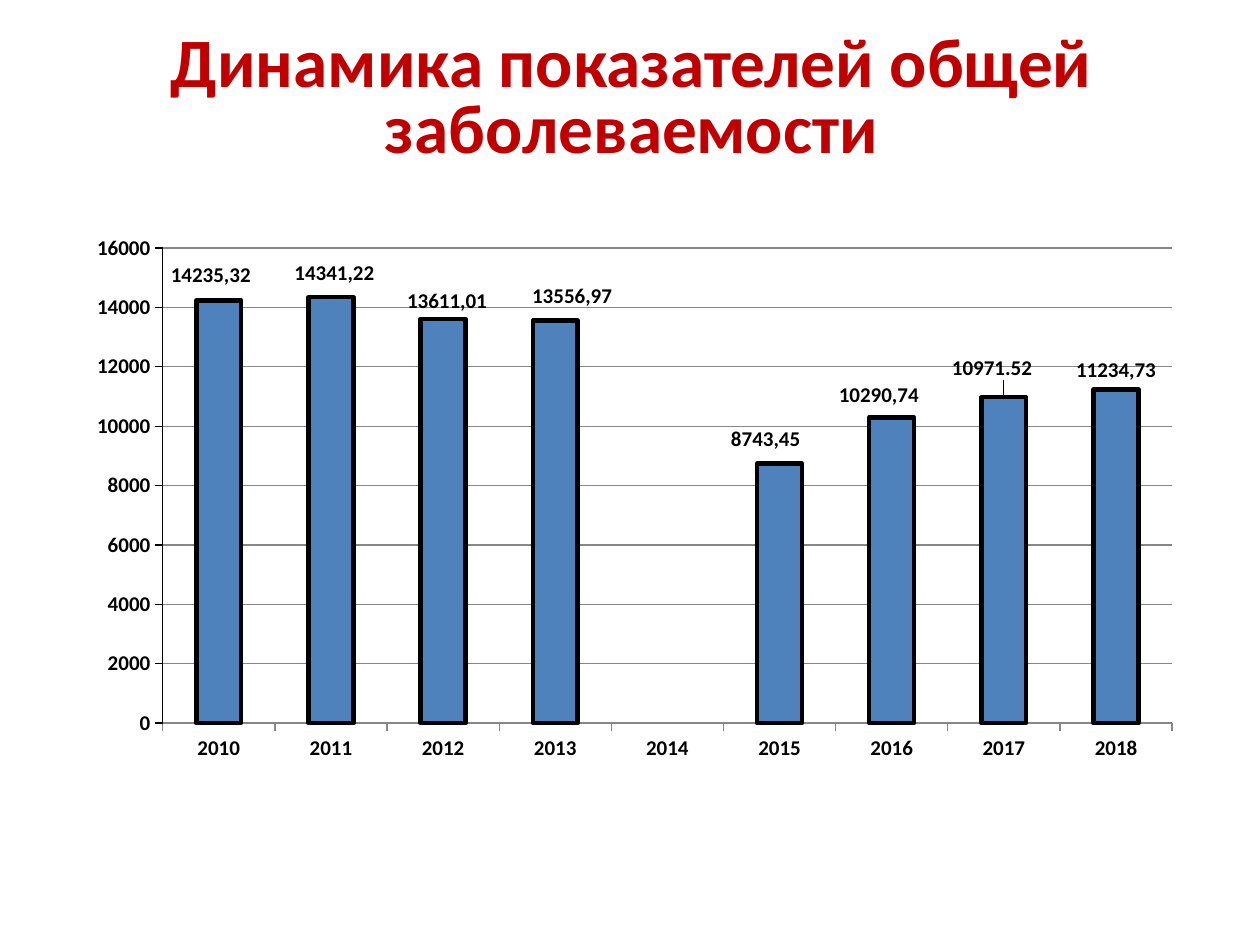
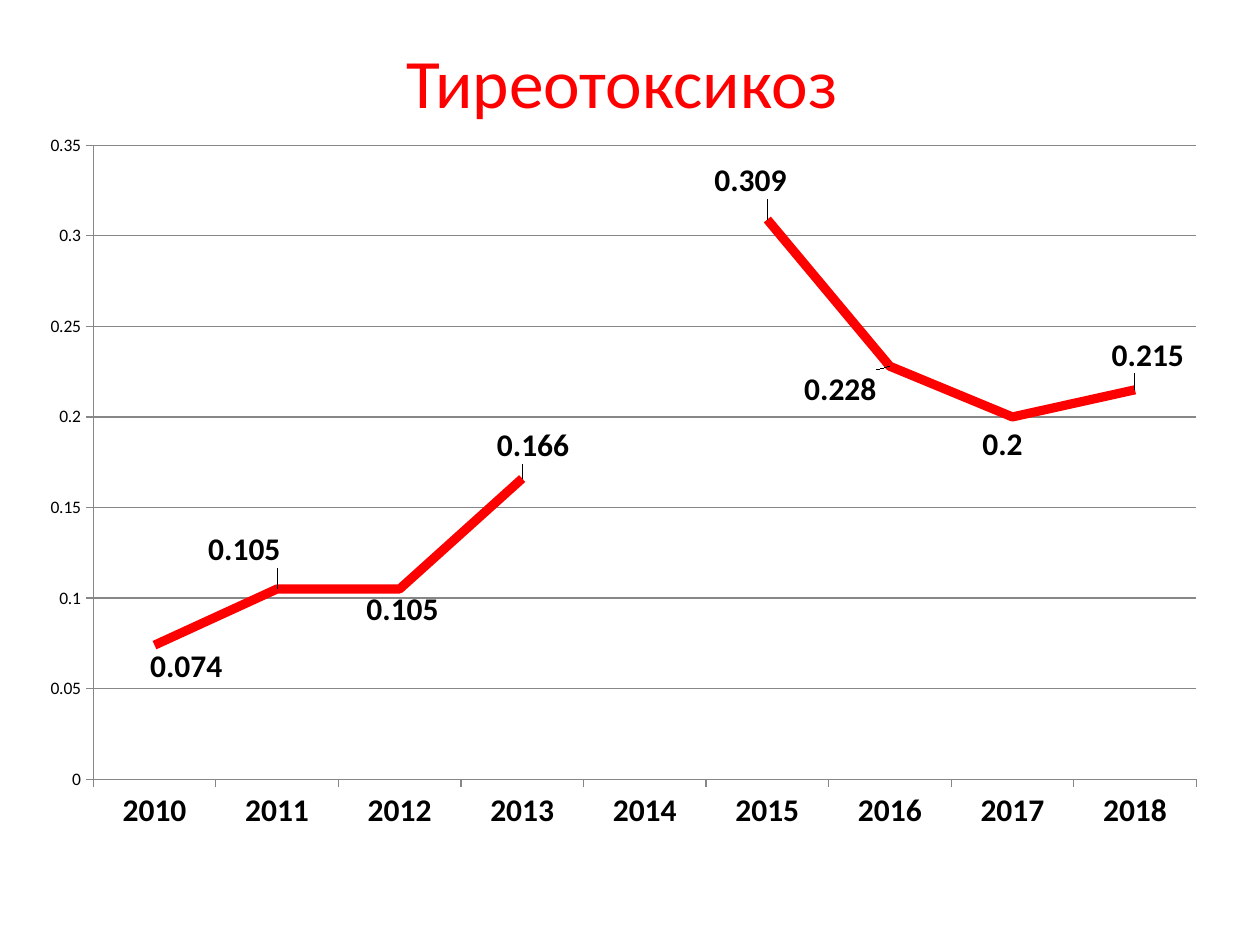
"""Build two chart slides on yearly morbidity figures."""
from dataclasses import dataclass
from typing import NamedTuple, Optional

from lxml import etree
from pptx import Presentation
from pptx import util as u
from pptx.chart import data as cd
from pptx.dml import color
from pptx.enum import chart as ec
from pptx.enum import text
from pptx.oxml import ns


@dataclass(frozen=True)
class Theme:
    font: str = "Calibri"
    black: str = "000000"
    grey: str = "878787"
    blue: str = "4F81BD"
    red: str = "FF0000"
    dark_red: str = "C00000"
    title_size: float = 39.6
    base_size: float = 10
    bar_text: float = 12
    line_text: float = 18
    hairline: float = 0.75
    bar_outline: float = 2.5
    trend_width: float = 5.25


class Box(NamedTuple):
    left: float
    top: float
    width: float
    height: float

    def cm(self) -> list:
        return [u.Cm(v) for v in self]


class Point(NamedTuple):
    value: Optional[float] = None
    dx: float = 0
    dy: float = 0
    label: str = ""


@dataclass(frozen=True)
class ChartSpec:
    kind: ec.XL_CHART_TYPE
    box: Box
    plot: Box
    points: list[Point]
    label_pos: ec.XL_LABEL_POSITION
    label_size: float
    value_size: float
    value_bold: bool
    value_line: str
    top: float
    step: float
    number_format: str


THEME = Theme()
YEARS = [str(year) for year in range(2010, 2019)]

MORBIDITY = ChartSpec(
    kind=ec.XL_CHART_TYPE.COLUMN_CLUSTERED,
    box=Box(1.27, 4.45, 22.86, 12.57),
    plot=Box(2.01, 0.55, 20.35, 9.58),
    points=[
        Point(14235.32, -0.16, -0.16, "14235,32"),
        Point(14341.22, 0.07, -0.14, "14341,22"),
        Point(13611.01, 0.08, 0, "13611,01"),
        Point(13556.97, 0.34, -0.14, "13556,97"),
        Point(),
        Point(8743.45, -0.28, -0.14, "8743,45"),
        Point(10290.74, -0.26, -0.1, "10290,74"),
        Point(10971.52, -0.24, -0.24),
        Point(11234.73, 0, -0.04, "11234,73"),
    ],
    label_pos=ec.XL_LABEL_POSITION.OUTSIDE_END,
    label_size=THEME.bar_text, value_size=THEME.bar_text, value_bold=True,
    value_line=THEME.black, top=16000, step=2000, number_format="General",
)

THYROTOXICOSIS = ChartSpec(
    kind=ec.XL_CHART_TYPE.LINE,
    box=Box(0.71, 2.51, 23.42, 14.6),
    plot=Box(1.17, 0.42, 22.25, 12.78),
    points=[
        Point(0.074, 0.64, 0.92),
        Point(0.105, -0.66, -0.32),
        Point(0.105, 0.06, 0.9),
        Point(0.166, 0.22, -0.18),
        Point(),
        Point(0.309, -0.34, -0.3),
        Point(0.228, -1, 0.94),
        Point(0.2, -0.2, 1.04),
        Point(0.215, 0.26, -0.22),
    ],
    label_pos=ec.XL_LABEL_POSITION.ABOVE,
    label_size=THEME.line_text, value_size=THEME.base_size, value_bold=False,
    value_line=THEME.grey, top=0.35, step=0.05, number_format="General",
)


def rgb(value: str) -> color.RGBColor:
    return color.RGBColor.from_string(value)


def set_font(font, size: float, bold: bool, ink: str = THEME.black) -> None:
    font.name, font.size, font.bold = THEME.font, u.Pt(size), bold
    font.color.rgb = rgb(ink)


def set_line(line, ink: str, width: float = THEME.hairline) -> None:
    line.color.rgb = rgb(ink)
    line.width = u.Pt(width)


def manual_layout(**settings) -> etree.ElementBase:
    layout = etree.Element(ns.qn("c:layout"))
    manual = etree.SubElement(layout, ns.qn("c:manualLayout"))
    for tag, value in settings.items():
        etree.SubElement(manual, ns.qn(f"c:{tag}")).set("val", str(value))
    return layout


def set_title(s, caption: str, box: Box, ink: str, bold: bool, spacing: float) -> None:
    sp = s.shapes.title
    sp.left, sp.top, sp.width, sp.height = box.cm()
    tf = sp.text_frame
    tf.text = caption
    tf.word_wrap = True
    tf.auto_size = text.MSO_AUTO_SIZE.NONE
    tf.vertical_anchor = text.MSO_ANCHOR.MIDDLE
    p = tf.paragraphs[0]
    p.alignment = text.PP_ALIGN.CENTER
    p.line_spacing = spacing
    set_font(p.runs[0].font, THEME.title_size, bold, ink)


def place_plot(chart, spec: ChartSpec) -> None:
    area = chart.element.xpath("//c:plotArea")[0]
    for old in area.findall(ns.qn("c:layout")):
        area.remove(old)
    area.insert(0, manual_layout(
        layoutTarget="inner", xMode="edge", yMode="edge",
        x=spec.plot.left / spec.box.width, y=spec.plot.top / spec.box.height,
        w=spec.plot.width / spec.box.width, h=spec.plot.height / spec.box.height))


def format_axes(chart, spec: ChartSpec) -> None:
    cat, val = chart.category_axis, chart.value_axis
    for axis, ink, size, bold in (
            (cat, THEME.grey, spec.label_size, True),
            (val, spec.value_line, spec.value_size, spec.value_bold)):
        axis.major_tick_mark = ec.XL_TICK_MARK.OUTSIDE
        axis.minor_tick_mark = ec.XL_TICK_MARK.NONE
        set_line(axis.format.line, ink)
        set_font(axis.tick_labels.font, size, bold)
    cat.has_major_gridlines = False
    val.has_major_gridlines = True
    set_line(val.major_gridlines.format.line, THEME.grey)
    val.minimum_scale, val.maximum_scale, val.major_unit = 0, spec.top, spec.step


def label_points(chart, spec: ChartSpec) -> None:
    plot = chart.plots[0]
    labelled = [(i, pt) for i, pt in enumerate(spec.points) if pt.value is not None]
    for i, pt in labelled:
        label = plot.series[0].points[i].data_label
        if pt.label:
            tf = label.text_frame
            tf.text = pt.label
            set_font(tf.paragraphs[0].runs[0].font, spec.label_size, True)
        else:
            set_font(label.font, spec.label_size, True)
        label.position = spec.label_pos
    for node, (_, pt) in zip(chart.element.xpath("//c:ser/c:dLbls/c:dLbl"), labelled):
        node.insert(1, manual_layout(x=pt.dx / spec.box.width, y=pt.dy / spec.box.height))


def add_chart(s, spec: ChartSpec):
    data = cd.CategoryChartData(number_format=spec.number_format)
    data.categories = YEARS
    data.add_series("Series 1", [pt.value for pt in spec.points])
    chart = s.shapes.add_chart(spec.kind, *spec.box.cm(), data).chart
    chart.has_legend = chart.has_title = False
    set_font(chart.font, THEME.base_size, False)
    chart.plots[0].vary_by_categories = False
    place_plot(chart, spec)
    format_axes(chart, spec)
    label_points(chart, spec)
    return chart


def build_morbidity(prs) -> None:
    s = prs.slides.add_slide(prs.slide_layouts[5])
    set_title(s, "Динамика показателей общей заболеваемости",
              Box(1.3, 0.74, 22.86, 2.57), THEME.dark_red, True, 0.8)
    plot = add_chart(s, MORBIDITY).plots[0]
    plot.gap_width = 150
    bars = plot.series[0].format
    bars.fill.solid()
    bars.fill.fore_color.rgb = rgb(THEME.blue)
    set_line(bars.line, THEME.black, THEME.bar_outline)


def build_thyrotoxicosis(prs) -> None:
    s = prs.slides.add_slide(prs.slide_layouts[5])
    set_title(s, "Тиреотоксикоз ", Box(1.27, 0.76, 22.86, 1.75), THEME.red, False, 1.0)
    trend = add_chart(s, THYROTOXICOSIS).plots[0].series[0]
    trend.smooth = False
    trend.marker.style = ec.XL_MARKER_STYLE.NONE
    set_line(trend.format.line, THEME.red, THEME.trend_width)


def main() -> None:
    prs = Presentation()
    prs.slide_width, prs.slide_height = u.Cm(25.4), u.Cm(19.05)
    build_morbidity(prs)
    build_thyrotoxicosis(prs)
    prs.save("out.pptx")


if __name__ == "__main__":
    main()
